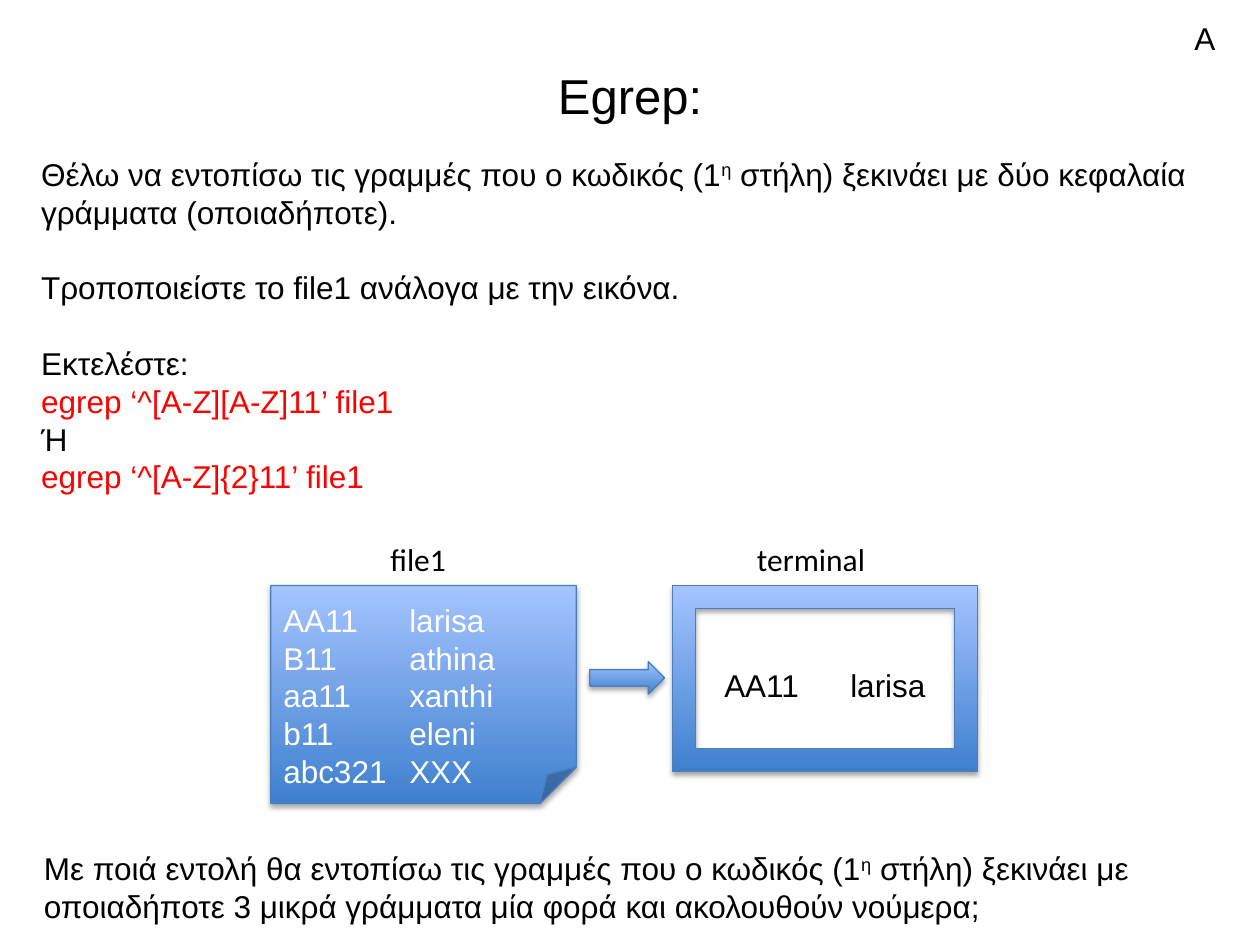
from lxml.etree import SubElement
from pptx import Presentation
from pptx.dml.color import RGBColor
from pptx.enum.shapes import MSO_SHAPE
from pptx.enum.text import MSO_ANCHOR, PP_ALIGN
from pptx.oxml.ns import qn
from pptx.util import Pt

BLACK = RGBColor(0, 0, 0)
WHITE = RGBColor(255, 255, 255)
RED = RGBColor(255, 0, 0)
DARK_BLUE = RGBColor(0x3F, 0x80, 0xCE)
LIGHT_BLUE = RGBColor(0xA4, 0xC4, 0xFF)
LINE_BLUE = RGBColor(0x4B, 0x7E, 0xBC)
LINE_HEIGHT = 21.6
TAB_STOP = 72


def add_paragraphs(tf, paragraphs, font="Arial"):
    """Each paragraph is (runs, colour, space before); a run "^x" is superscript."""
    for i, (runs, color, gap) in enumerate(paragraphs):
        p = tf.paragraphs[0] if i == 0 else tf.add_paragraph()
        p.alignment = PP_ALIGN.LEFT
        p.line_spacing = Pt(LINE_HEIGHT)
        if gap:
            p.space_before = Pt(gap)
        if any("\t" in text for text in runs):
            tabs = SubElement(p._p.get_or_add_pPr(), qn("a:tabLst"))
            SubElement(tabs, qn("a:tab"), pos=str(Pt(TAB_STOP)), algn="l")
        for text in runs:
            r = p.add_run()
            r.text = text.removeprefix("^")
            r.font.name = font
            r.font.size = Pt(18)
            r.font.color.rgb = color
            if text.startswith("^"):
                r._r.get_or_add_rPr().set("baseline", "30000")


def add_blue_shape(kind, left, top, width, height):
    sp = s.shapes.add_shape(kind, Pt(left), Pt(top), Pt(width), Pt(height))
    sp.fill.gradient()
    sp.fill.gradient_angle = 90
    for stop, color in zip(sp.fill.gradient_stops, (DARK_BLUE, LIGHT_BLUE)):
        stop.color.rgb = color
    sp.line.color.rgb = LINE_BLUE
    sp.line.width = Pt(0.75)
    sp.shadow.inherit = False
    effects = sp.element.spPr.find(qn("a:effectLst"))
    shadow = SubElement(effects, qn("a:outerShdw"), blurRad=str(Pt(3.1)),
                        dist=str(Pt(1.8)), dir="5400000", rotWithShape="0")
    color = SubElement(shadow, qn("a:srgbClr"), val=str(BLACK))
    SubElement(color, qn("a:alpha"), val="35000")
    return sp


prs = Presentation()
prs.slide_width, prs.slide_height = Pt(720), Pt(540)
s = prs.slides.add_slide(prs.slide_layouts[5])

title = s.shapes.title
title.left, title.top, title.width, title.height = Pt(36), Pt(33), Pt(648), Pt(42.5)
tf = title.text_frame
tf.vertical_anchor = MSO_ANCHOR.MIDDLE
p = tf.paragraphs[0]
p.alignment = PP_ALIGN.CENTER
r = p.add_run()
r.text = "Egrep:"
r.font.name = "Arial"
r.font.size = Pt(28)
r.font.color.rgb = BLACK

# File on the left, arrow, terminal on the right
file_shape = add_blue_shape(MSO_SHAPE.FOLDED_CORNER, 154.8, 334.6, 174.5, 124.6)
tf = file_shape.text_frame
tf.vertical_anchor = MSO_ANCHOR.MIDDLE
tf.margin_top = Pt(25.2)
rows = ["AA11\tlarisa", "B11\tathina", "aa11\txanthi", "b11\teleni", "abc321\tXXX"]
add_paragraphs(tf, [([row], WHITE, 0) for row in rows])

add_blue_shape(MSO_SHAPE.RIGHT_ARROW, 337, 378, 42.8, 18.7)
add_blue_shape(MSO_SHAPE.FRAME, 384.2, 334.6, 174.5, 106.4)

task = [
    (["Θέλω να εντοπίσω τις γραμμές που ο κωδικός (1", "^η",
      " στήλη) ξεκινάει με δύο κεφαλαία γράμματα (οποιαδήποτε)."], BLACK, 0),
    (["Τροποποιείστε το file1 ανάλογα με την εικόνα."], BLACK, LINE_HEIGHT),
    (["Εκτελέστε:"], BLACK, LINE_HEIGHT),
    (["egrep ‘^[A-Z][Α-Ζ]11’ file1"], RED, 0),
    (["Ή"], BLACK, 0),
    (["egrep ‘^[A-Z]{2}11’ file1"], RED, 0),
]
question = [
    (["Με ποιά εντολή θα εντοπίσω τις γραμμές που ο κωδικός (1", "^η",
      " στήλη) ξεκινάει με οποιαδήποτε 3 μικρά γράμματα μία φορά"
      " και ακολουθούν νούμερα;"], BLACK, 0),
]

# left, top, width, height, wrap, font, paragraphs
text_boxes = [
    (16.4, 85, 683.3, 203.8, True, "Arial", task),
    (216, 305.3, 46.8, 28.8, False, "Calibri", [(["file1"], BLACK, 0)]),
    (406.8, 377.3, 141.8, 28.8, True, "Arial", [(["AA11\tlarisa"], BLACK, 0)]),
    (425.5, 305.3, 77, 28.8, False, "Calibri", [(["terminal"], BLACK, 0)]),
    (18, 481.7, 681.8, 51.1, True, "Arial", question),
    (675.4, 7.2, 36, 28.8, True, "Arial", [(["Α"], BLACK, 0)]),
]
for left, top, width, height, wrap, font, paragraphs in text_boxes:
    box = s.shapes.add_textbox(Pt(left), Pt(top), Pt(width), Pt(height))
    box.text_frame.word_wrap = wrap
    add_paragraphs(box.text_frame, paragraphs, font)

prs.save("out.pptx")
